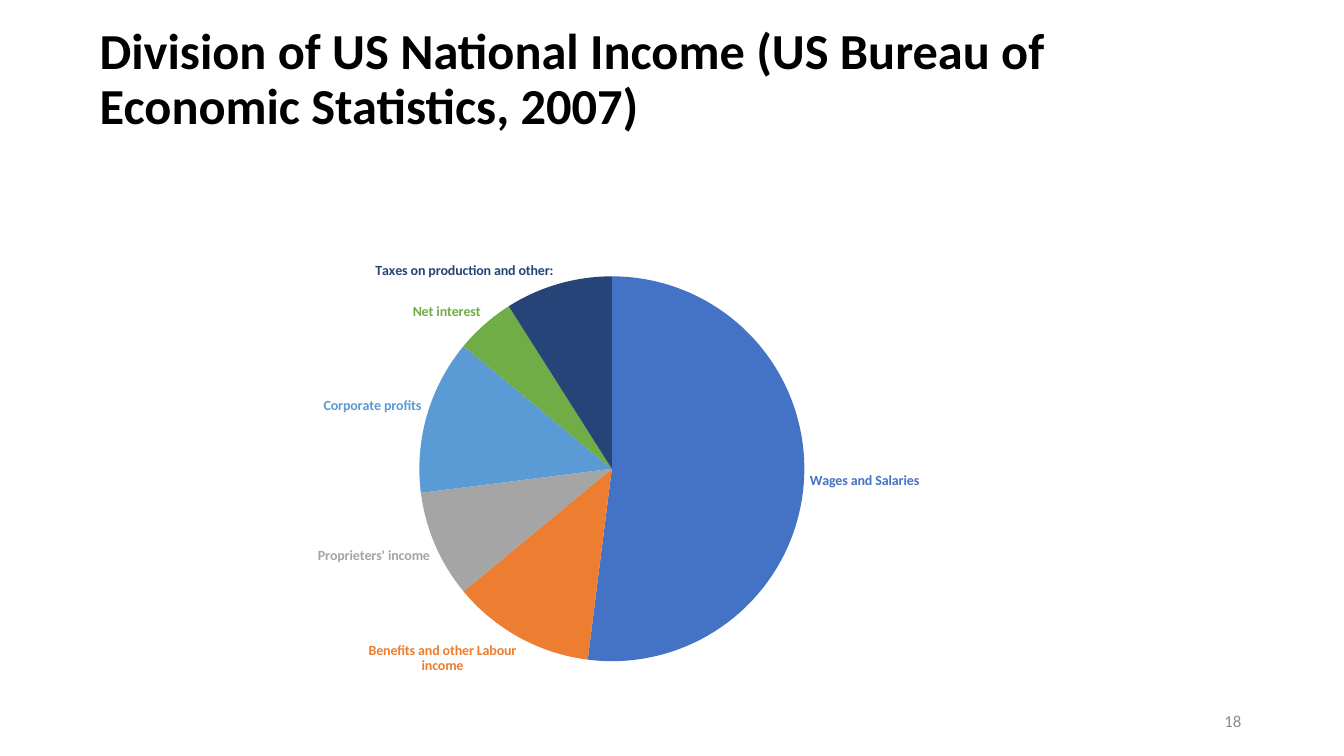
"""Build a slide with a pie chart of the division of US national income."""
from typing import NamedTuple

from pptx import Presentation
from pptx import util as u
from pptx.chart.data import CategoryChartData
from pptx.dml.color import RGBColor
from pptx.enum import chart as charts, text
from pptx.oxml import parse_xml
from pptx.oxml.ns import nsdecls

FONT = "Calibri"
COLOURS = {
    "black": "000000",
    "page_number": "8C8C8C",
    "blue": "4472C4",
    "orange": "ED7D31",
    "grey": "A5A5A5",
    "gold": "FFC000",
    "sky": "5B9BD5",
    "green": "70AD47",
    "navy": "264478",
}


class Box(NamedTuple):
    left: float
    top: float
    width: float
    height: float


class TextBlock(NamedTuple):
    wording: str
    box: Box
    size: int
    colour: str
    bold: bool
    align: text.PP_ALIGN
    line_spacing: float
    bottom_inset: float


class Slice(NamedTuple):
    category: str
    share: int
    colour: str


TEXT_BLOCKS = [
    TextBlock("Division of US National Income (US Bureau of Economic Statistics, 2007)",
              Box(0.89, 0.35, 11.53, 1.49), 36, "black", True, text.PP_ALIGN.LEFT, 0.9, 0.64),
    TextBlock("18", Box(9.41, 6.95, 3, 0.4), 12, "page_number", False,
              text.PP_ALIGN.RIGHT, 1.0, 0.05),
]
CHART_BOX = Box(1.55, 2.42, 9.12, 4.53)
PIE_BOX = Box(4.16, 2.74, 3.82, 3.82)
SLICES = [
    Slice("Wages and Salaries", 52, "blue"),
    Slice("Benefits and other Labour income", 12, "orange"),
    Slice("Proprieters' income", 9, "grey"),
    Slice("Rental income", 0, "gold"),
    Slice("Corporate profits", 13, "sky"),
    Slice("Net interest", 5, "green"),
    Slice("Taxes on production and other: ", 9, "navy"),
]


def colour(name: str) -> RGBColor:
    return RGBColor.from_string(COLOURS[name])


def inches(box: Box) -> list[u.Length]:
    return [u.Inches(length) for length in box]


def style_font(font, size: int, colour_name: str, bold: bool) -> None:
    font.name = FONT
    font.size = u.Pt(size)
    font.bold = bold
    font.color.rgb = colour(colour_name)


def add_text(slide, block: TextBlock) -> None:
    frame = slide.shapes.add_textbox(*inches(block.box)).text_frame
    frame.word_wrap = True
    frame.vertical_anchor = text.MSO_ANCHOR.MIDDLE
    frame.margin_bottom = u.Inches(block.bottom_inset)
    frame.text = block.wording
    paragraph = frame.paragraphs[0]
    paragraph.alignment = block.align
    paragraph.line_spacing = block.line_spacing
    style_font(paragraph.runs[0].font, block.size, block.colour, block.bold)


def place_pie(chart) -> None:
    fractions = {
        "x": (PIE_BOX.left - CHART_BOX.left) / CHART_BOX.width,
        "y": (PIE_BOX.top - CHART_BOX.top) / CHART_BOX.height,
        "w": PIE_BOX.width / CHART_BOX.width,
        "h": PIE_BOX.height / CHART_BOX.height,
    }
    edges = "".join(f'<c:{edge}Mode val="edge"/>' for edge in "xy")
    sizes = "".join(f'<c:{key} val="{value:.3f}"/>' for key, value in fractions.items())
    plot_area = chart.element.xpath("c:chart/c:plotArea")[0]
    for layout in plot_area.xpath("c:layout"):
        plot_area.remove(layout)
    plot_area.insert(0, parse_xml(
        f'<c:layout {nsdecls("c")}><c:manualLayout><c:layoutTarget val="inner"/>'
        f"{edges}{sizes}</c:manualLayout></c:layout>"))


def add_income_pie(slide) -> None:
    data = CategoryChartData(number_format="#,##0")
    data.categories = [part.category for part in SLICES]
    data.add_series("Series 1", [part.share for part in SLICES])
    chart = slide.shapes.add_chart(charts.XL_CHART_TYPE.PIE, *inches(CHART_BOX), data).chart
    chart.has_legend = False
    chart.has_title = False
    style_font(chart.font, 10, "black", False)
    place_pie(chart)

    plot = chart.plots[0]
    plot.vary_by_categories = True
    series = plot.series[0]
    labels = series.data_labels
    labels.show_category_name = True
    labels.show_value = False
    labels.position = charts.XL_LABEL_POSITION.OUTSIDE_END
    for index, part in enumerate(SLICES):
        point = series.points[index]
        point.format.fill.solid()
        point.format.fill.fore_color.rgb = colour(part.colour)
        point.format.line.fill.background()
        style_font(point.data_label.font, 10, part.colour, True)
        point.data_label.position = charts.XL_LABEL_POSITION.OUTSIDE_END
    for flag, value in {"showVal": "0", "showCatName": "1"}.items():
        for element in chart.element.xpath(f".//c:dLbl/c:{flag}"):
            element.set("val", value)


def main() -> None:
    presentation = Presentation()
    presentation.slide_width = u.Inches(13.33)
    presentation.slide_height = u.Inches(7.5)
    slide = presentation.slides.add_slide(presentation.slide_layouts[6])
    for block in TEXT_BLOCKS:
        add_text(slide, block)
    add_income_pie(slide)
    presentation.save("out.pptx")


if __name__ == "__main__":
    main()
